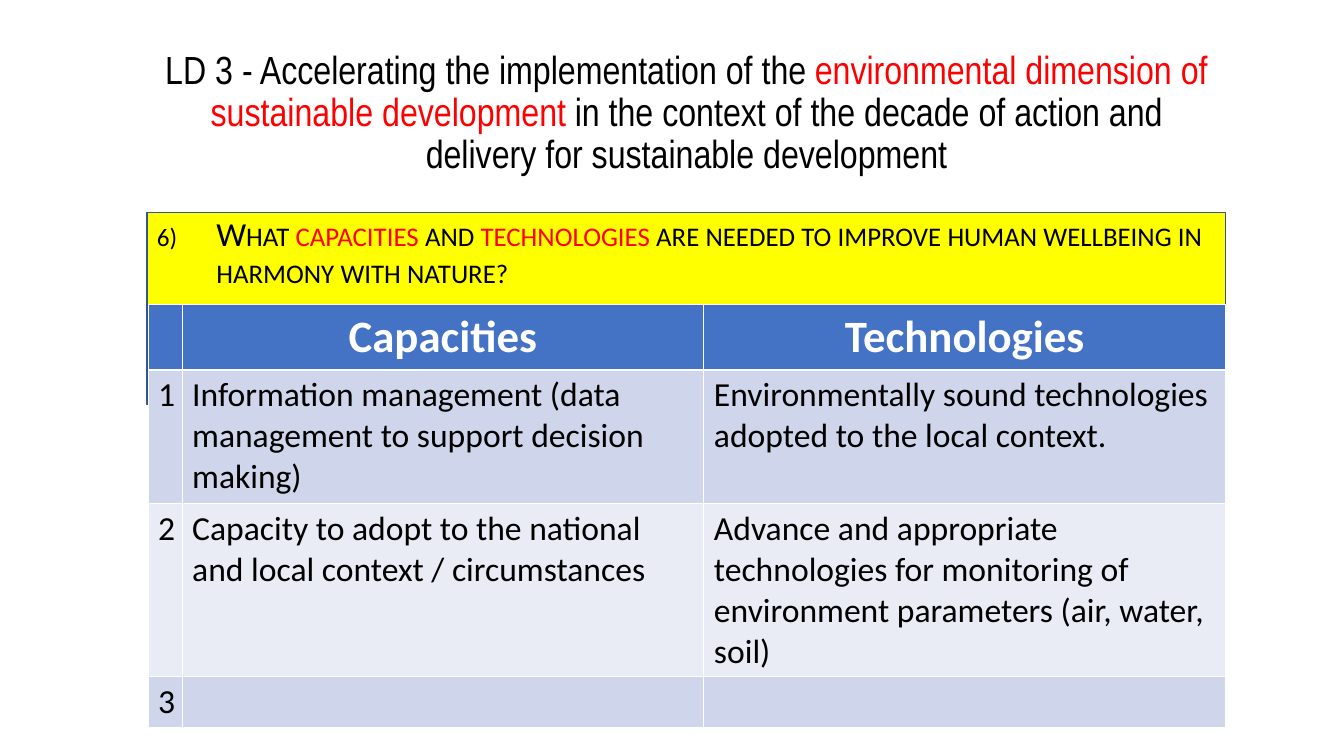
from lxml.etree import SubElement
from pptx import Presentation
from pptx.dml.color import RGBColor as Rgb
from pptx.enum.shapes import MSO_SHAPE as Form
from pptx.enum.text import MSO_ANCHOR as Anchor, PP_ALIGN as Align
from pptx.oxml.ns import qn
from pptx.util import Pt

BLACK, WHITE, RED = "000000", "FFFFFF", "FF0000"
BLUE, BANDS = "4472C4", ("CFD5EA", "E9EBF5")
HEAD = {"size": Pt(32), "name": "Calibri", "bold": True}
BODY = {"size": Pt(24), "name": "Calibri", "bold": False}
TITLE = {"size": Pt(28), "name": "Arial Narrow"}

TOPIC = [
    ("LD 3 - Accelerating the implementation of the ", BLACK),
    ("environmental dimension of sustainable development ", RED),
    ("in the context of the decade of action and delivery for sustainable development", BLACK),
]
QUERY = [
    ("What ", BLACK),
    ("capacities ", RED),
    ("and ", BLACK),
    ("technologies", RED),
    (" are needed to improve human wellbeing in harmony with nature?", BLACK),
]
ROWS = [
    ("", "Capacities", "Technologies"),
    ("1", "Information management (data management to support decision making)",
     "Environmentally sound technologies adopted to the local context."),
    ("2", "Capacity to adopt to the national and local context / circumstances",
     "Advance and appropriate technologies for monitoring of environment parameters (air, water, soil)"),
    ("3", "", ""),
]


def color(code):
    return Rgb.from_string(code)


def dress(item, form):
    for key, value in form.items():
        setattr(item, key, value)


def paint(item, code):
    item.fill.solid()
    item.fill.fore_color.rgb = color(code)


def write(para, parts, form):
    for text, code in parts:
        run = para.add_run()
        run.text = text
        dress(run.font, form)
        run.font.color.rgb = color(code)


def add_text(slide, box, form):
    frame = slide.shapes.add_textbox(*map(Pt, box)).text_frame
    dress(frame, {"word_wrap": True, **form})
    return frame.paragraphs[0]


def add_title(slide, box):
    para = add_text(slide, box, {"vertical_anchor": Anchor.MIDDLE})
    dress(para, {"alignment": Align.CENTER, "line_spacing": 0.9})
    write(para, TOPIC, TITLE)


def add_query(slide, box):
    left, top, width, height = box
    panel = slide.shapes.add_shape(Form.RECTANGLE, *map(Pt, box))
    panel.shadow.inherit = False
    paint(panel, "FFFF00")
    panel.line.color.rgb = color("325491")
    panel.line.width = Pt(1)

    para = add_text(slide, (left, top, width + 19, height), {})
    dress(para, {"line_spacing": 0.9, "space_before": Pt(10)})
    write(para, QUERY, BODY)
    for run in para.runs:
        run.font._element.set("cap", "small")
    props = para._p.get_or_add_pPr()
    props.set("marL", str(Pt(42.5)))
    props.set("indent", str(-Pt(42.5)))
    SubElement(props, qn("a:buSzPct"), val="75000")
    SubElement(props, qn("a:buFont"), typeface="+mj-lt")
    SubElement(props, qn("a:buAutoNum"), type="arabicParenR", startAt="6")


def add_grid(slide, box):
    left, top, width, height = box
    frame = slide.shapes.add_table(len(ROWS), 3, *map(Pt, box))
    table = frame.table
    first = 24.3
    half = (width - first) / 2
    for column, size in zip(table.columns, (first, half, half)):
        column.width = Pt(size)
    for row, share in zip(table.rows, (0.155, 0.315, 0.41, 0.12)):
        row.height = Pt(height * share)
    for i, texts in enumerate(ROWS):
        head = i == 0
        for cell, text in zip(table.rows[i].cells, texts):
            paint(cell, BLUE if head else BANDS[(i - 1) % 2])
            para = cell.text_frame.paragraphs[0]
            para.alignment = Align.CENTER if head else Align.LEFT
            if text:
                write(para, [(text, WHITE if head else BLACK)], HEAD if head else BODY)


def main():
    deck = Presentation()
    dress(deck, {"slide_width": Pt(960), "slide_height": Pt(540)})
    slide = deck.slides.add_slide(deck.slide_layouts[6])
    left, width = 105, 770.5
    add_query(slide, (left, 152, width, 137))
    add_title(slide, (left, 29, width, 104.5))
    add_grid(slide, (left + 0.8, 217.5, width - 0.8, 302))
    deck.save("out.pptx")


if __name__ == "__main__":
    main()
